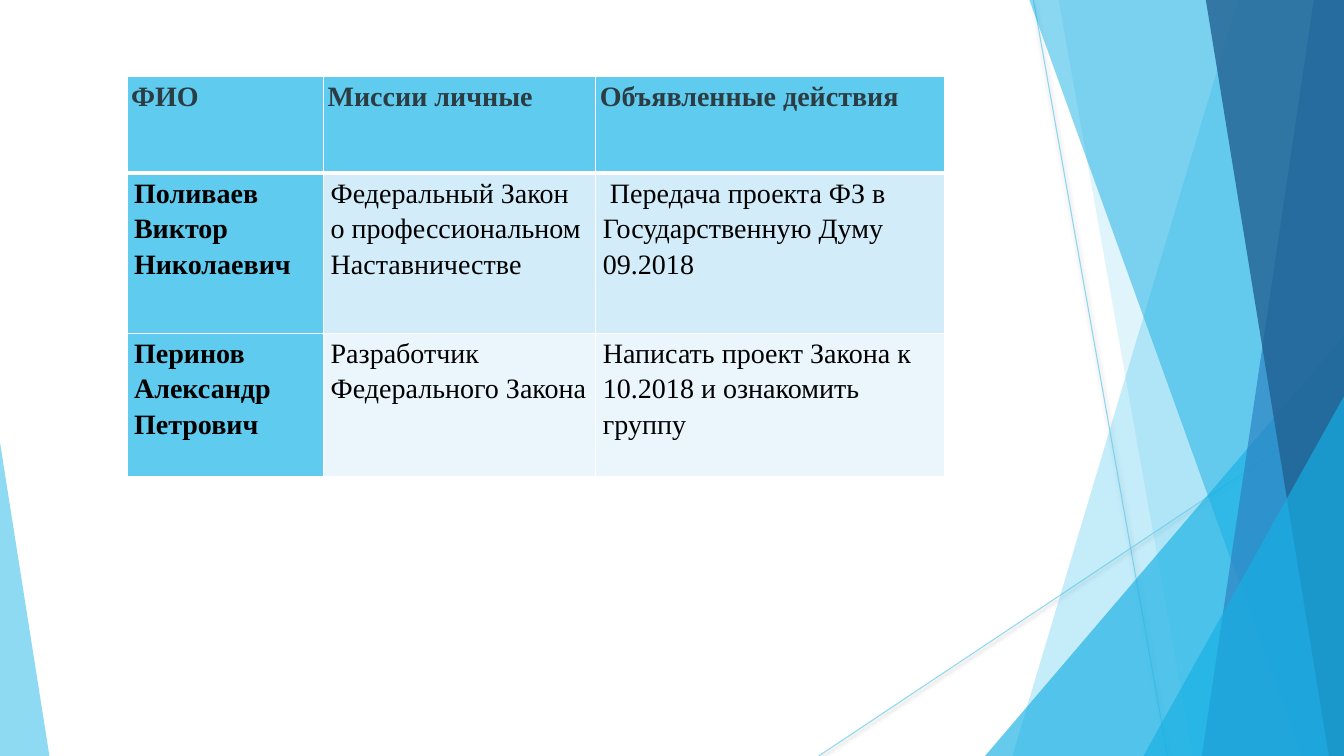
from lxml import etree
from pptx import Presentation
from pptx.dml.color import RGBColor
from pptx.enum.shapes import MSO_CONNECTOR, MSO_SHAPE
from pptx.oxml import parse_xml
from pptx.oxml.ns import nsdecls, qn
from pptx.util import Inches, Pt

LINE = MSO_CONNECTOR.STRAIGHT
TRIANGLE = MSO_SHAPE.ISOSCELES_TRIANGLE
SKY = RGBColor(0x5F, 0xCB, 0xEF)
CYAN = RGBColor(0x17, 0xB0, 0xE4)
BLUE = RGBColor(0x2E, 0x83, 0xC3)
NAVY = RGBColor(0x22, 0x62, 0x92)
PALE = RGBColor(0xD2, 0xEC, 0xF9)
MIST = RGBColor(0xEA, 0xF6, 0xFC)
SLATE = RGBColor(0x2C, 0x3C, 0x43)
BLACK = RGBColor(0, 0, 0)
WIDE, HIGH = 13.33, 7.5


def set_alpha(fill, color, alpha):
    """Apply a solid colour with an opacity in percent."""
    fill.solid()
    fill.fore_color.rgb = color
    node = fill._xPr.find(qn("a:solidFill"))[0]
    etree.SubElement(node, qn("a:alpha")).set("val", str(alpha * 1000))


def paint(shape, color, alpha):
    shape.shadow.inherit = False
    shape.line.fill.background()
    set_alpha(shape.fill, color, alpha)


deck = Presentation()
deck.slide_width, deck.slide_height = Inches(WIDE), Inches(HIGH)
slide = deck.slides.add_slide(deck.slide_layouts[6])
shapes = slide.shapes

# Thin crossing lines with a soft shadow
for ends in [(10.25, 0, 11.58, 7.5), (13.33, 4.03, 8.12, 7.5)]:
    line = shapes.add_connector(LINE, *[Inches(v) for v in ends])
    line.line.width = Pt(0.75)
    set_alpha(line.line.fill, SKY, 70)
    line._element.spPr.append(parse_xml(
        f'<a:effectLst {nsdecls("a")}><a:outerShdw blurRad="39400" dist="20300" '
        'dir="5400000" rotWithShape="0"><a:srgbClr val="000000">'
        '<a:alpha val="38000"/></a:srgbClr></a:outerShdw></a:effectLst>'))

# Facets: bands reach the right edge (top x, bottom x),
# triangles rise to a corner (left, top, width, apex)
facets = [
    ("band", (12.28, 10.04), SKY, 36),
    ("band", (10.5, 11.83), SKY, 20),
    ("peak", (9.77, 3.33, 3.56, 1), CYAN, 66),
    ("band", (10.21, 12.91), CYAN, 50),
    ("band", (13.03, 11.92), BLUE, 70),
    ("band", (11.96, 13.18), NAVY, 80),
    ("peak", (11.34, 3.93, 1.99, 1), CYAN, 66),
    ("peak", (0, 4.39, 0.49, 0), SKY, 70),
]
for kind, place, color, alpha in facets:
    if kind == "band":
        top, base = place
        path = shapes.build_freeform(Inches(top), 0)
        path.add_line_segments([(Inches(x), Inches(y)) for x, y in
                                [(WIDE, 0), (WIDE, HIGH), (base, HIGH)]])
        facet = path.convert_to_shape()
    else:
        left, top, width, apex = place
        facet = shapes.add_shape(TRIANGLE, Inches(left), Inches(top),
                                 Inches(width), Inches(HIGH - top))
        facet.adjustments[0] = apex
    paint(facet, color, alpha)

# Table of missions
rows = [
    ["ФИО", "Миссии личные", "Объявленные действия"],
    ["Поливаев\nВиктор\nНиколаевич",
     "Федеральный Закон о профессиональном Наставничестве",
     "Передача проекта ФЗ в Государственную Думу\n09.2018"],
    ["Перинов\nАлександр\nПетрович", "Разработчик Федерального Закона",
     "Написать проект Закона к 10.2018 и ознакомить группу"],
]
widths, heights = [1.95, 2.7, 3.46], [0.96, 1.59, 1.42]
table = shapes.add_table(3, 3, Inches(1.26), Inches(0.76),
                         Inches(sum(widths)), Inches(sum(heights))).table
for col, width in zip(table.columns, widths):
    col.width = Inches(width)
for row, height in zip(table.rows, heights):
    row.height = Inches(height)

for r, texts in enumerate(rows):
    for c, text in enumerate(texts):
        cell = table.cell(r, c)
        cell.text = text
        cell.margin_left = cell.margin_right = Inches(0.07 if r else 0.04)
        cell.margin_top = cell.margin_bottom = 0
        cell.fill.solid()
        cell.fill.fore_color.rgb = SKY if r == 0 or c == 0 else (PALE, MIST)[r - 1]
        for para in cell.text_frame.paragraphs:
            para.line_spacing = 1.15
            para.font.name = "Times New Roman"
            para.font.size = Pt(20)
            para.font.bold = r == 0 or c == 0
            para.font.color.rgb = BLACK if r else SLATE
        # White borders, heavier under the header
        for i, side in enumerate("LRTB"):
            heavy = (r, side) in [(0, "B"), (1, "T")]
            cell._tc.tcPr.insert(i, parse_xml(
                f'<a:ln{side} {nsdecls("a")} w="{Pt(3 if heavy else 1)}">'
                '<a:solidFill><a:srgbClr val="FFFFFF"/></a:solidFill>'
                f'</a:ln{side}>'))

# First-line indent of the first action
first = table.cell(1, 2).text_frame.paragraphs[0]
first._p.get_or_add_pPr().set("indent", str(Inches(0.07)))

deck.save("out.pptx")
